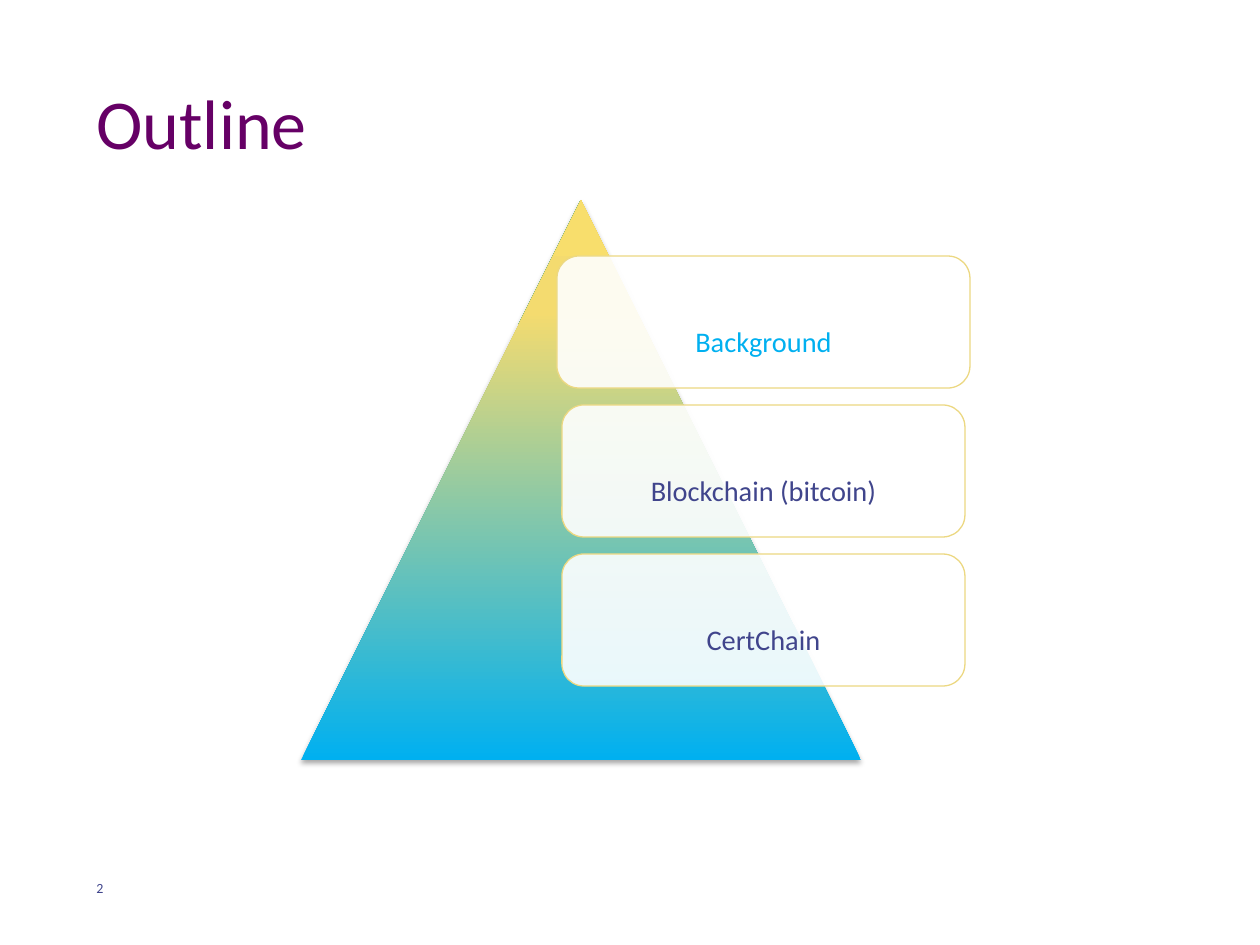
import pptx
import pptx.util
import pptx.dml.color
import pptx.enum.shapes
import pptx.enum.text
import pptx.oxml
import pptx.oxml.ns

PX = 914400 // 126  # EMU per px
THEME = {
    "font": "Calibri",
    "title": "660066", "text": "40458C", "accent": "00B0F0",
    "card": "FFFFFF", "border": "ECD882",
    "gradient": [(0, "00B0F0"), (80, "F4DB6F"), (100, "F8DE6C")],
    "title_size": 40, "card_size": 28, "number_size": 8,
}
NS = pptx.oxml.ns.nsdecls("a")


def place(sp, x, y, w, h):
    sp.left, sp.top, sp.width, sp.height = (v * PX for v in (x, y, w, h))


def add_run(p, text, size, color):
    r = p.add_run()
    r.text = text
    r.font.name = THEME["font"]
    r.font.size = pptx.util.Pt(size)
    r.font.color.rgb = pptx.dml.color.RGBColor.from_string(color)
    return r


prs = pptx.Presentation()
prs.slide_width = 1260 * PX
prs.slide_height = 945 * PX
slide = prs.slides.add_slide(prs.slide_layouts[5])

# Title
title = slide.shapes.title
place(title, 84, 42, 1103, 158)
tf = title.text_frame
tf.vertical_anchor = pptx.enum.text.MSO_ANCHOR.MIDDLE
p = tf.paragraphs[0]
p.alignment = pptx.enum.text.PP_ALIGN.LEFT
add_run(p, "Outline", THEME["title_size"], THEME["title"])

# Slide number
number = slide.shapes.add_textbox(84 * PX, 840 * PX, 84 * PX, 63 * PX)
tf = number.text_frame
tf.word_wrap = True
tf.vertical_anchor = pptx.enum.text.MSO_ANCHOR.BOTTOM
add_run(tf.paragraphs[0], "2", THEME["number_size"], THEME["text"])

# Pyramid with an upward gradient and a soft shadow
pyramid = slide.shapes.add_shape(
    pptx.enum.shapes.MSO_SHAPE.ISOSCELES_TRIANGLE,
    301 * PX, 200 * PX, 560 * PX, 560 * PX)
pyramid.line.fill.background()
stops = "".join(
    f'<a:gs pos="{pos * 1000}"><a:srgbClr val="{color}"/></a:gs>'
    for pos, color in THEME["gradient"])
gradient = pptx.oxml.parse_xml(
    f'<a:gradFill {NS} rotWithShape="1"><a:gsLst>{stops}</a:gsLst>'
    '<a:lin ang="16200000" scaled="0"/></a:gradFill>')
shadow = pptx.oxml.parse_xml(
    f'<a:effectLst {NS}><a:outerShdw blurRad="39370" dist="22860" '
    'dir="5400000" rotWithShape="0"><a:srgbClr val="000000">'
    '<a:alpha val="35000"/></a:srgbClr></a:outerShdw></a:effectLst>')
sp_pr = pyramid._element.spPr
sp_pr.find(pptx.oxml.ns.qn("a:prstGeom")).addnext(gradient)
sp_pr.append(shadow)

# Topic cards, centred on one axis at equal steps
CENTER, TOP, STEP, HEIGHT, INSET = 763, 256, 149, 132, 21
topics = [
    ("Background", 413, THEME["accent"]),
    ("Blockchain (bitcoin)", 403, THEME["text"]),
    ("CertChain", 403, THEME["text"]),
]
for i, (topic, width, color) in enumerate(topics):
    card = slide.shapes.add_shape(
        pptx.enum.shapes.MSO_SHAPE.ROUNDED_RECTANGLE,
        (CENTER - width // 2) * PX, (TOP + i * STEP) * PX,
        width * PX, HEIGHT * PX)
    card.shadow.inherit = False
    card.fill.solid()
    card.fill.fore_color.rgb = pptx.dml.color.RGBColor.from_string(THEME["card"])
    fill_color = card._element.spPr.find(
        pptx.oxml.ns.qn("a:solidFill")).find(pptx.oxml.ns.qn("a:srgbClr"))
    fill_color.append(pptx.oxml.parse_xml(f'<a:alpha {NS} val="90000"/>'))
    card.line.color.rgb = pptx.dml.color.RGBColor.from_string(THEME["border"])
    card.line.width = pptx.util.Pt(0.75)

    tf = card.text_frame
    tf.word_wrap = True
    tf.vertical_anchor = pptx.enum.text.MSO_ANCHOR.MIDDLE
    tf.margin_left = tf.margin_right = INSET * PX
    tf.margin_top = tf.margin_bottom = INSET * PX
    p = tf.paragraphs[0]
    p.alignment = pptx.enum.text.PP_ALIGN.CENTER
    p.line_spacing = 0.9
    p.space_after = pptx.util.Pt(10)
    r = add_run(p, topic, THEME["card_size"], color)
    r.font._element.set("baseline", "-25000")

prs.save("out.pptx")
